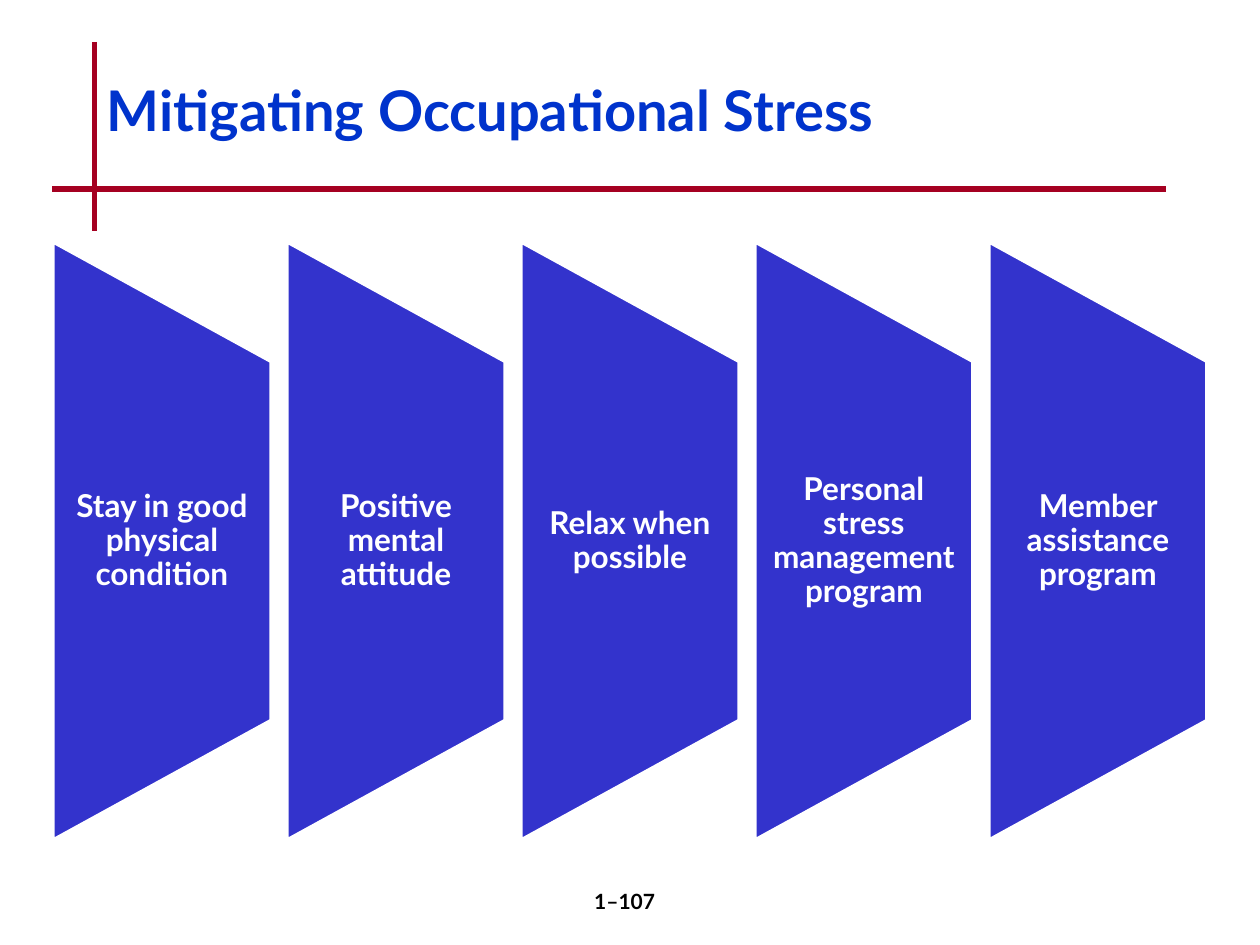
from lxml.etree import SubElement
from pptx import Presentation
from pptx.dml.color import RGBColor
from pptx.enum.shapes import MSO_CONNECTOR as Connector, MSO_SHAPE as Shape
from pptx.enum.text import MSO_ANCHOR as Anchor, PP_ALIGN as Align
from pptx.oxml.ns import qn
from pptx.util import Pt

STRATEGIES = [
    "Stay in good physical condition",
    "Positive mental attitude",
    "Relax when possible",
    "Personal stress management program",
    "Member assistance program",
]
PANEL_LEFT, PANEL_PITCH = 30.2, 133.7
PANEL_WIDTH, PANEL_HEIGHT = 124.7, 342
PANEL_MIDDLE = 309.1
LABEL_HEIGHT = 205.2


def color(value):
    return RGBColor.from_string(value)


def set_values(target, values):
    for name, value in values.items():
        setattr(target, name, value)


def add_rule(page, start, end):
    rule = page.shapes.add_connector(
        Connector.STRAIGHT, *(Pt(value) for value in (*start, *end)))
    rule.line.color.rgb = color("A50021")
    rule.line.width = Pt(3)
    SubElement(rule._element.spPr, qn("a:effectLst"))


def add_text(page, text, bounds, size, hex_color, frame_format, para_format):
    box = page.shapes.add_textbox(*(Pt(value) for value in bounds))
    set_values(box.text_frame, {"word_wrap": True, **frame_format})
    para = box.text_frame.paragraphs[0]
    set_values(para, para_format)
    span = para.add_run()
    span.text = text
    set_values(span.font, {"name": "Lato", "size": Pt(size), "bold": True})
    span.font.color.rgb = color(hex_color)


def add_panel(page, left, text):
    center = left + PANEL_WIDTH / 2
    panel = page.shapes.add_shape(
        Shape.FLOWCHART_MANUAL_OPERATION,
        Pt(center - PANEL_HEIGHT / 2), Pt(PANEL_MIDDLE - PANEL_WIDTH / 2),
        Pt(PANEL_HEIGHT), Pt(PANEL_WIDTH))
    panel.rotation = 270
    panel.shadow.inherit = False
    panel.fill.solid()
    panel.fill.fore_color.rgb = color("3333CC")
    panel.line.color.rgb = color("FFFFFF")
    panel.line.width = Pt(2)
    add_text(
        page, text,
        (left, PANEL_MIDDLE - LABEL_HEIGHT / 2, PANEL_WIDTH, LABEL_HEIGHT),
        18, "FFFFFF",
        {"vertical_anchor": Anchor.MIDDLE, "margin_left": Pt(8.9),
         "margin_right": Pt(8.9), "margin_top": 0, "margin_bottom": 0},
        {"alignment": Align.CENTER, "line_spacing": 0.9})


def main():
    deck = Presentation()
    set_values(deck, {"slide_width": Pt(720), "slide_height": Pt(540)})
    page = deck.slides.add_slide(deck.slide_layouts[6])
    add_rule(page, (54, 24), (54, 132))
    add_rule(page, (30, 108), (666, 108))
    add_text(page, "1–107", (282, 504, 150, 36), 12, "000000",
             {"vertical_anchor": Anchor.TOP}, {"alignment": Align.CENTER})
    add_text(page, "Mitigating Occupational Stress", (54, 24, 612, 84), 32,
             "0033CC", {"vertical_anchor": Anchor.MIDDLE},
             {"line_spacing": 0.8})
    for index, strategy in enumerate(STRATEGIES):
        add_panel(page, PANEL_LEFT + index * PANEL_PITCH, strategy)
    deck.save("out.pptx")


if __name__ == "__main__":
    main()
